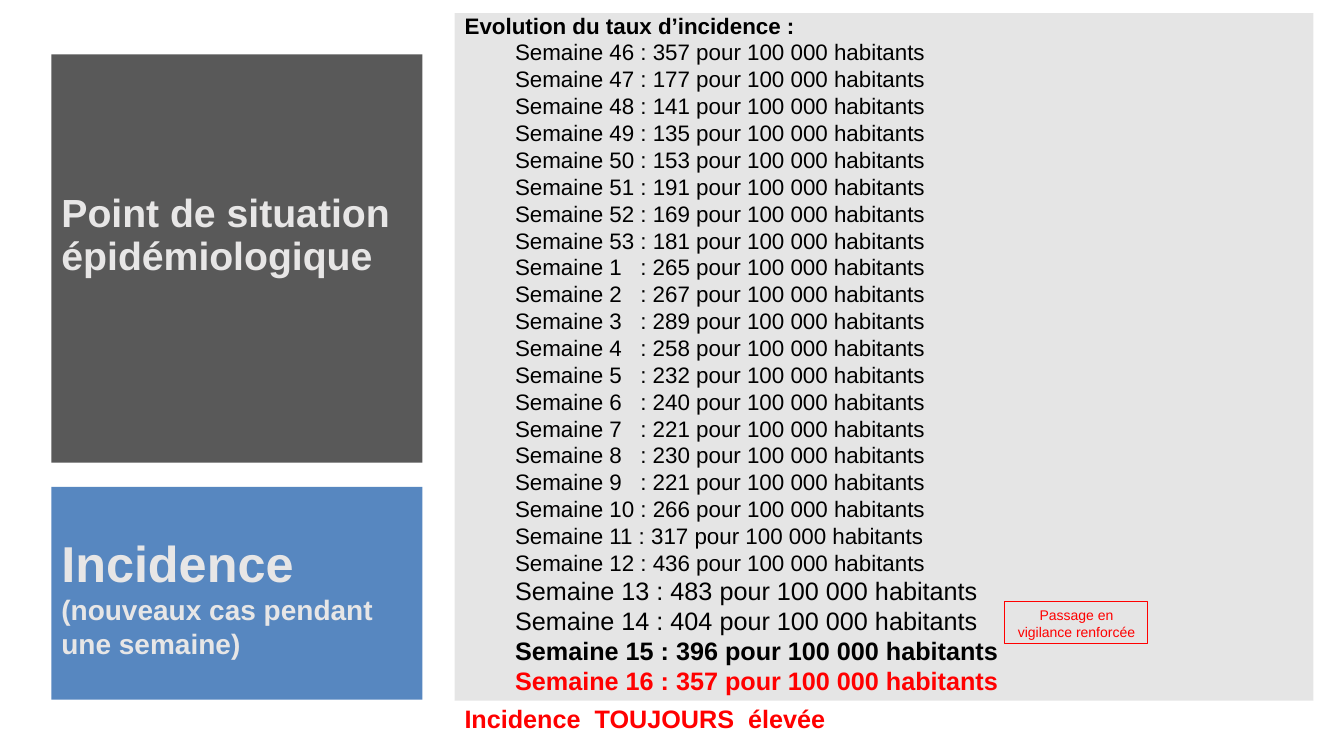
from lxml import etree
from pptx import Presentation
from pptx.dml.color import RGBColor
from pptx.enum.shapes import MSO_SHAPE
from pptx.enum.text import MSO_ANCHOR, MSO_AUTO_SIZE, PP_ALIGN
from pptx.oxml.ns import qn
from pptx.util import Pt

RECTANGLE = MSO_SHAPE.RECTANGLE
TOP, MIDDLE = MSO_ANCHOR.TOP, MSO_ANCHOR.MIDDLE
NO_AUTOFIT = MSO_AUTO_SIZE.NONE
LEFT, CENTER = PP_ALIGN.LEFT, PP_ALIGN.CENTER

FONT = "Arial"
DARK_GRAY = RGBColor(0x59, 0x59, 0x59)
GRAY = RGBColor(0x80, 0x80, 0x80)
BLUE = RGBColor(0x4F, 0x81, 0xBD)
LIGHT = RGBColor(0xE7, 0xE6, 0xE6)
BLACK = RGBColor(0x00, 0x00, 0x00)
RED = RGBColor(0xFF, 0x00, 0x00)

# Shared columns: left edge and width
SIDE = (36.7, 265)
MAIN = (324.7, 613.4)

# Incidence per 100 000 inhabitants, by week
INCIDENCE = [
    (46, 357), (47, 177), (48, 141), (49, 135), (50, 153), (51, 191),
    (52, 169), (53, 181), (1, 265), (2, 267), (3, 289), (4, 258),
    (5, 232), (6, 240), (7, 221), (8, 230), (9, 221), (10, 266),
    (11, 317), (12, 436), (13, 483), (14, 404), (15, 396), (16, 357),
]
LARGE_WEEKS = (13, 14, 15, 16)
BOLD_WEEKS = (15, 16)
CURRENT_WEEK = 16


def place(shape, left, top, width, height):
    shape.left, shape.top = Pt(left), Pt(top)
    shape.width, shape.height = Pt(width), Pt(height)


def prepare_frame(shape, anchor, bottom=3.6):
    frame = shape.text_frame
    frame.auto_size = NO_AUTOFIT
    frame.word_wrap = True
    frame.vertical_anchor = anchor
    frame.margin_left = frame.margin_right = Pt(7.2)
    frame.margin_top, frame.margin_bottom = Pt(3.6), Pt(bottom)
    return frame


def add_run(paragraph, text, size, color, bold=False):
    run = paragraph.add_run()
    run.text = text
    run.font.name = FONT
    run.font.size = Pt(size)
    run.font.bold = bold
    run.font.color.rgb = color


def add_panel(slide, left, top, width, height, color, opacity=100):
    panel = slide.shapes.add_shape(
        RECTANGLE, Pt(left), Pt(top), Pt(width), Pt(height))
    panel.shadow.inherit = False
    panel.line.fill.background()
    panel.fill.solid()
    panel.fill.fore_color.rgb = color
    if opacity < 100:
        fill_color = panel.fill._xPr.find(".//" + qn("a:srgbClr"))
        etree.SubElement(fill_color, qn("a:alpha"), val=str(opacity * 1000))


def add_text(slide, left, top, width, height, runs):
    box = slide.shapes.add_textbox(Pt(left), Pt(top), Pt(width), Pt(height))
    paragraph = prepare_frame(box, TOP).paragraphs[0]
    for text, size, color in runs:
        add_run(paragraph, text, size, color, bold=True)


def add_framed_note(slide, left, top, width, height, text):
    note = slide.shapes.add_shape(
        RECTANGLE, Pt(left), Pt(top), Pt(width), Pt(height))
    note.shadow.inherit = False
    note.fill.background()
    note.line.color.rgb = RED
    note.line.width = Pt(0.75)
    paragraph = prepare_frame(note, TOP).paragraphs[0]
    paragraph.alignment = CENTER
    add_run(paragraph, text, 10, RED)


def fill_title(title):
    place(title, SIDE[0], 57.6, SIDE[1], 251.3)
    # The deeper bottom margin lifts the title above the panel's centre
    paragraph = prepare_frame(title, MIDDLE, bottom=32.6).paragraphs[0]
    paragraph.alignment = LEFT
    paragraph.line_spacing = 0.9
    add_run(paragraph, "Point de situation épidémiologique", 28, LIGHT, True)


def format_list_line(paragraph, indent, line_height):
    paragraph.alignment = LEFT
    paragraph.space_before = paragraph.space_after = Pt(0)
    paragraph.line_spacing = Pt(line_height)
    properties = paragraph._p.get_or_add_pPr()
    properties.set("marL", str(Pt(indent)))
    properties.set("indent", "0")
    etree.SubElement(properties, qn("a:buNone"))


def fill_incidence_list(body):
    place(body, MAIN[0], 28.8, 511.9, 447.8)
    frame = prepare_frame(body, MIDDLE)
    heading = frame.paragraphs[0]
    format_list_line(heading, 0, 19.2)
    add_run(heading, "Evolution du taux d’incidence :", 16, BLACK, True)
    for week, rate in INCIDENCE:
        large = week in LARGE_WEEKS
        label = f"{week} " if week > 9 else f"{week}   "
        paragraph = frame.add_paragraph()
        format_list_line(paragraph, 36, 21.4 if large else 19.2)
        add_run(paragraph, f"Semaine {label}: {rate} pour 100 000 habitants",
                18 if large else 16,
                RED if week == CURRENT_WEEK else BLACK,
                week in BOLD_WEEKS)


def bring_to_front(shape):
    tree = shape._element.getparent()
    tree.append(shape._element)


def main():
    presentation = Presentation()
    presentation.slide_width, presentation.slide_height = Pt(960), Pt(540)
    slide = presentation.slides.add_slide(presentation.slide_layouts[1])
    title, body = slide.shapes.title, slide.placeholders[1]

    # Background panels
    add_panel(slide, SIDE[0], 38.9, SIDE[1], 291.6, DARK_GRAY)
    add_panel(slide, SIDE[0], 347.8, SIDE[1], 151.9, BLUE, opacity=95)
    add_panel(slide, MAIN[0], 9.4, MAIN[1], 491, GRAY, opacity=20)

    # Title and weekly list, above the panels
    fill_title(title)
    fill_incidence_list(body)
    bring_to_front(title)
    bring_to_front(body)

    # Subject, alert note and conclusion
    add_text(slide, SIDE[0], 376.6, SIDE[1], 94.3, [
        ("Incidence ", 36, LIGHT),
        ("(nouveaux cas pendant une semaine)", 20, LIGHT),
    ])
    add_framed_note(slide, 717.8, 429.8, 102.2, 30.2,
                    "Passage en vigilance renforcée")
    add_text(slide, MAIN[0], 499, MAIN[1], 31,
             [("Incidence  TOUJOURS  élevée", 18, RED)])

    presentation.save("out.pptx")


if __name__ == "__main__":
    main()
